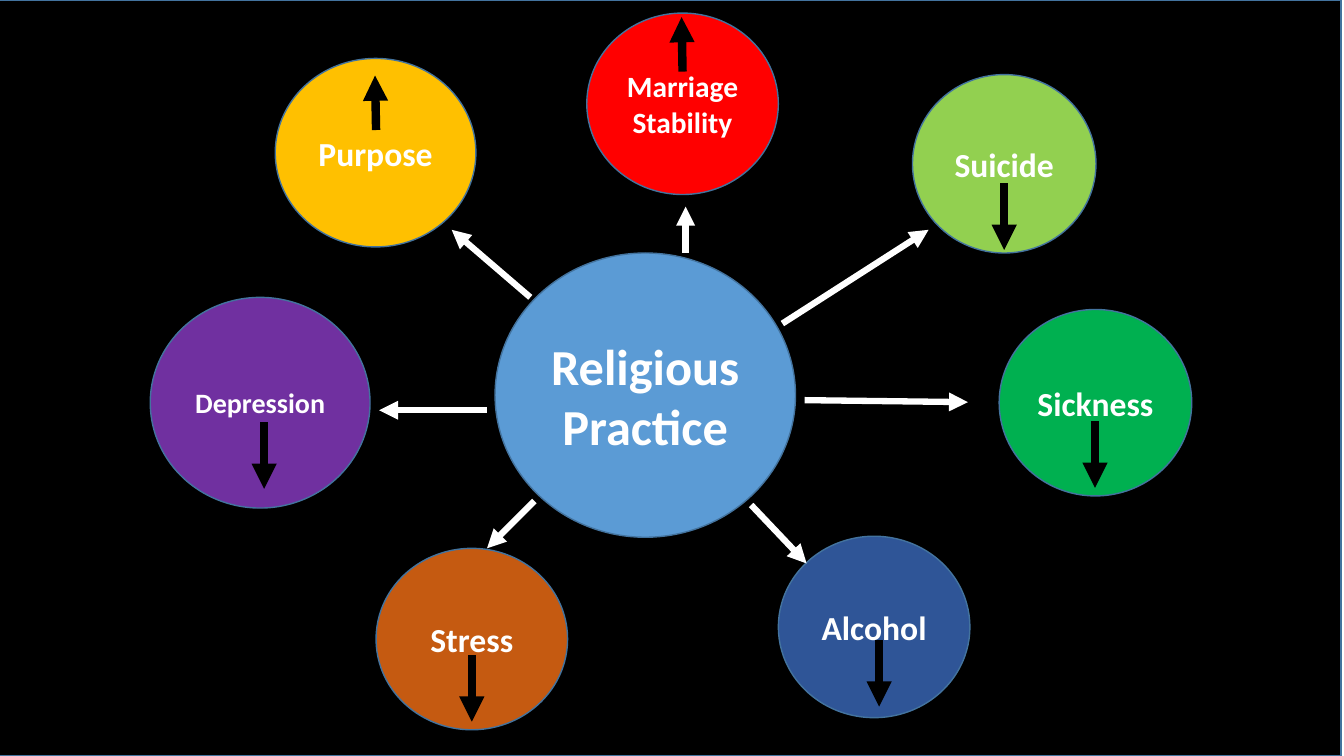
from lxml.etree import SubElement
from pptx import Presentation
from pptx.dml.color import RGBColor
from pptx.enum.shapes import MSO_CONNECTOR, MSO_SHAPE
from pptx.enum.text import MSO_ANCHOR, PP_ALIGN
from pptx.oxml.ns import qn
from pptx.util import Inches, Pt

COLORS = {
    "black": "000000",
    "white": "FFFFFF",
    "outline": "43739E",
    "blue": "5B9BD5",
    "lime": "92D050",
    "red": "FF0000",
    "navy": "2F5597",
    "rust": "C55A11",
    "gold": "FFC000",
    "green": "00B050",
    "purple": "7030A0",
}

OUTCOMES = [
    ("Suicide", "lime", 24, (9.05, 0.74, 1.82, 1.77), (9.96, 1.82), (9.96, 2.48)),
    ("Marriage Stability", "red", 21, (5.82, 0.13, 1.9, 1.8), (6.77, 0.71), (6.76, 0.17)),
    ("Alcohol", "navy", 24, (7.72, 5.32, 1.9, 1.8), (8.72, 6.35), (8.72, 7.01)),
    ("Stress", "rust", 24, (3.73, 5.44, 1.9, 1.8), (4.68, 6.5), (4.68, 7.16)),
    ("Purpose", "gold", 24, (2.73, 0.58, 1.99, 1.87), (3.73, 1.29), (3.72, 0.75)),
    ("Sickness", "green", 24, (9.91, 3.07, 1.91, 1.85), (10.86, 4.18), (10.86, 4.84)),
    ("Depression", "purple", 20, (1.49, 2.95, 2.18, 2.09), (2.62, 4.19), (2.62, 4.85)),
]

SPOKES = [
    ((6.8, 2.51), (6.8, 2.05)),
    ((7.76, 3.21), (9.21, 2.28)),
    ((7.98, 3.97), (9.6, 3.99)),
    ((4.83, 4.07), (3.76, 4.07)),
    ((5.3, 4.97), (4.83, 5.44)),
    ((5.26, 2.95), (4.48, 2.28)),
    ((7.45, 5.01), (8, 5.59)),
]


def color(name):
    return RGBColor.from_string(COLORS[name])


def write(frame, text, size, ink="white", font="Calibri", bold=True):
    frame.word_wrap = True
    frame.vertical_anchor = MSO_ANCHOR.MIDDLE
    para = frame.paragraphs[0]
    para.alignment = PP_ALIGN.CENTER
    span = para.add_run()
    span.text = text
    span.font.name = font
    span.font.size = Pt(size)
    span.font.bold = bold
    span.font.color.rgb = color(ink)


class Diagram:
    def __init__(self, page):
        self.page = page
        self.outline = "outline"
        self.outline_width = Pt(1)

    def shape(self, kind, place, fill, parent=None):
        shapes = (parent or self.page).shapes
        box = shapes.add_shape(kind, *(Inches(length) for length in place))
        box.shadow.inherit = False
        box.fill.solid()
        box.fill.fore_color.rgb = color(fill)
        box.line.color.rgb = color(self.outline)
        box.line.width = self.outline_width
        return box

    def circle(self, text, fill, size, place, parent=None):
        box = self.shape(MSO_SHAPE.OVAL, place, fill, parent)
        write(box.text_frame, text, size=size)

    def arrow(self, start, end, ink, width, parent=None):
        shapes = (parent or self.page).shapes
        ends = (Inches(length) for length in start + end)
        line = shapes.add_connector(MSO_CONNECTOR.STRAIGHT, *ends)
        line.line.color.rgb = color(ink)
        line.line.width = Pt(width)
        SubElement(line.line._get_or_add_ln(), qn("a:tailEnd"), type="triangle")
        SubElement(line._element.spPr, qn("a:effectLst"))

    def outcome(self, text, fill, size, place, start, end):
        group = self.page.shapes.add_group_shape()
        self.circle(text, fill, size, place, group)
        self.arrow(start, end, "black", 6, group)


def main():
    deck = Presentation()
    deck.slide_width = Inches(13.33)
    deck.slide_height = Inches(7.5)
    diagram = Diagram(deck.slides.add_slide(deck.slide_layouts[6]))
    diagram.shape(MSO_SHAPE.RECTANGLE, (-0.03, 0, 13.33, 7.5), "black")
    diagram.circle("Religious Practice", "blue", 36, (4.91, 2.51, 2.98, 2.82))
    for outcome in OUTCOMES:
        diagram.outcome(*outcome)
    for start, end in SPOKES:
        diagram.arrow(start, end, "white", 4.5)
    deck.save("out.pptx")


if __name__ == "__main__":
    main()
